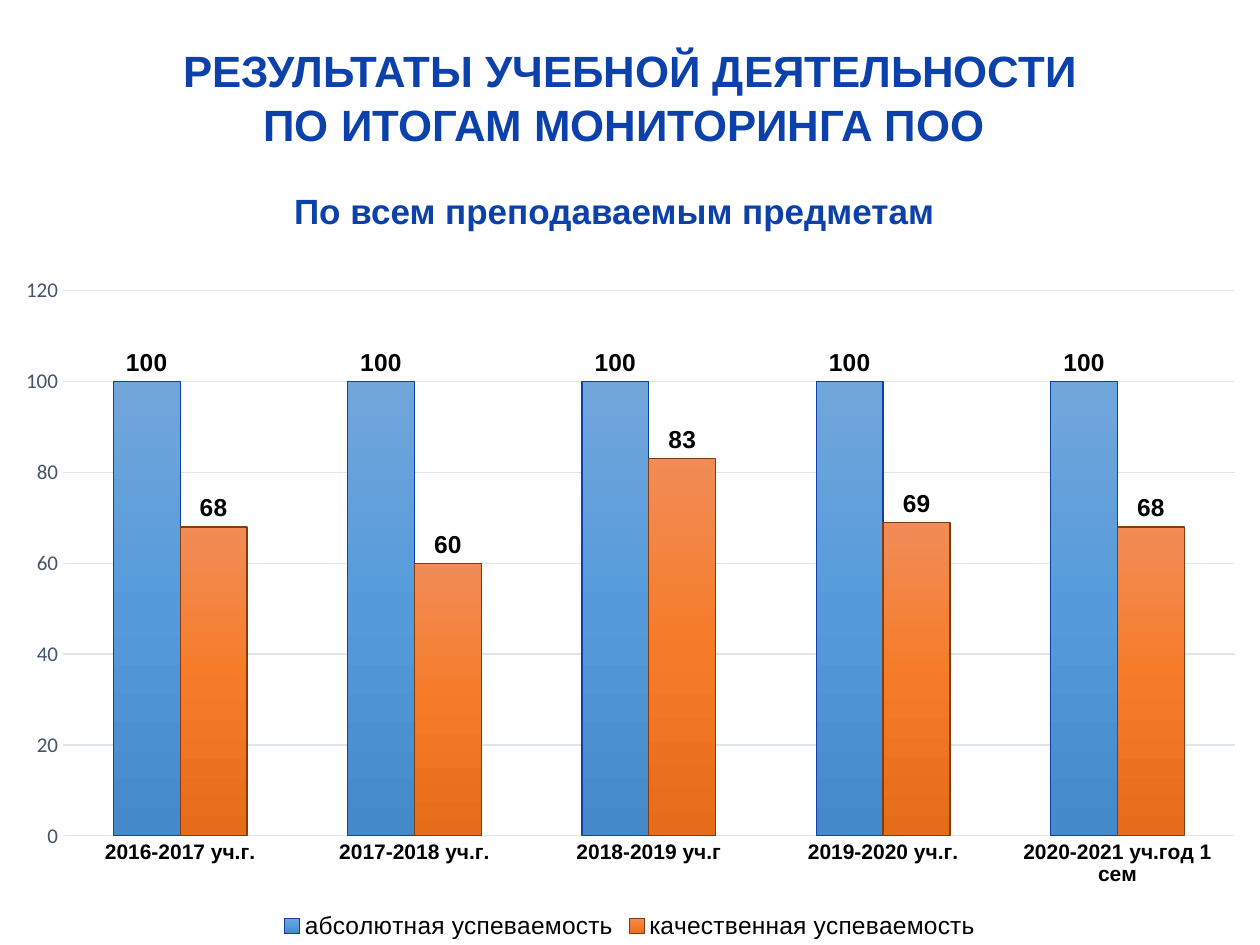
from copy import deepcopy
from dataclasses import dataclass
from typing import Any

from lxml.etree import SubElement
from pptx import Presentation
from pptx.chart.data import CategoryChartData
from pptx.chart.series import BarSeries
from pptx.dml.color import RGBColor
from pptx.enum.chart import XL_CHART_TYPE, XL_LABEL_POSITION, XL_LEGEND_POSITION, XL_TICK_MARK
from pptx.enum.text import MSO_ANCHOR, PP_ALIGN
from pptx.oxml.ns import qn
from pptx.util import Cm, Pt

BLUE = "0C40AA"
BLACK = "000000"
GRID = "E0E5EB"


@dataclass
class Label:
    lines: list[str]
    left: float
    top: float
    width: float
    height: float
    size: float


@dataclass
class Series:
    name: str
    vals: list[int]
    stops: list[str]
    edge: str


LABELS = [
    Label(["РЕЗУЛЬТАТЫ УЧЕБНОЙ ДЕЯТЕЛЬНОСТИ", "ПО ИТОГАМ МОНИТОРИНГА ПОО "], 0, 0.74, 25.4, 2.39, 25),
    Label(["По всем преподаваемым предметам"], 1.55, 3.66, 21.67, 1.12, 20),
]
YEARS = ["2016-2017 уч.г.", "2017-2018 уч.г.", "2018-2019 уч.г", "2019-2020 уч.г.", "2020-2021 уч.год 1 сем"]
SERIES = [
    Series("абсолютная успеваемость", [100] * 5, ["71A6DB", "559BDB", "448ACA"], BLUE),
    Series("качественная успеваемость", [68, 60, 83, 69, 68], ["F18C57", "F67B28", "E56C19"], "843C0B"),
]
LAYOUT = {"layoutTarget": "inner", "xMode": "edge", "yMode": "edge", "x": 0.05, "y": 0.04, "w": 0.93, "h": 0.8}


def tint(code: str) -> RGBColor:
    return RGBColor.from_string(code)


def apply(item: Any, values: dict[str, Any]) -> None:
    for name, value in values.items():
        setattr(item, name, value)


def style(font: Any, size: float, color: str = BLACK, bold: bool = False, name: str = "Arial") -> None:
    apply(font, {"size": Pt(size), "bold": bold, "name": name})
    font.color.rgb = tint(color)


def stroke(line: Any, color: str) -> None:
    line.color.rgb = tint(color)
    line.width = Pt(0.75)


def write(slide: Any, label: Label) -> None:
    box = slide.shapes.add_textbox(Cm(label.left), Cm(label.top), Cm(label.width), Cm(label.height))
    frame = box.text_frame
    apply(frame, {"word_wrap": True, "vertical_anchor": MSO_ANCHOR.MIDDLE, "text": "\n".join(label.lines)})
    for para in frame.paragraphs:
        apply(para, {"alignment": PP_ALIGN.CENTER, "line_spacing": 1.04})
        style(para.runs[0].font, label.size, BLUE, True)


def paint(bars: BarSeries, item: Series) -> None:
    fill = bars.format.fill
    fill.gradient()
    fill.gradient_angle = 270
    stops = bars._element.find(".//" + qn("a:gsLst"))
    stops.append(deepcopy(stops[-1]))
    for index, (stop, code) in enumerate(zip(fill.gradient_stops, item.stops)):
        stop.position = index / 2
        stop.color.rgb = tint(code)
    stroke(bars.format.line, item.edge)
    labels = bars.data_labels
    apply(labels, {"show_value": True, "position": XL_LABEL_POSITION.OUTSIDE_END})
    style(labels.font, 14, bold=True)


def place(chart: Any) -> None:
    area = chart._chartSpace.chart.plotArea
    for old in area.findall(qn("c:layout")):
        area.remove(old)
    layout = SubElement(area, qn("c:layout"))
    area.insert(0, layout)
    manual = SubElement(layout, qn("c:manualLayout"))
    for name, value in LAYOUT.items():
        SubElement(manual, qn("c:" + name)).set("val", str(value))


def plot(slide: Any) -> None:
    data = CategoryChartData()
    data.categories = YEARS
    for item in SERIES:
        data.add_series(item.name, item.vals)
    chart = slide.shapes.add_chart(
        XL_CHART_TYPE.COLUMN_CLUSTERED, Cm(0), Cm(5.31), Cm(25.4), Cm(13.74), data
    ).chart
    apply(chart, {"has_title": False, "has_legend": True})
    style(chart.font, 10, name="Calibri")
    apply(chart.legend, {"position": XL_LEGEND_POSITION.BOTTOM, "include_in_layout": False})
    style(chart.legend.font, 14)
    apply(chart.plots[0], {"gap_width": 150, "overlap": 0, "vary_by_categories": False})
    for bars, item in zip(chart.plots[0].series, SERIES):
        paint(bars, item)
    base, scale = chart.category_axis, chart.value_axis
    for axis in (base, scale):
        apply(axis, {"major_tick_mark": XL_TICK_MARK.NONE, "minor_tick_mark": XL_TICK_MARK.NONE})
    apply(scale, {"minimum_scale": 0, "maximum_scale": 120, "major_unit": 20, "has_major_gridlines": True})
    style(base.tick_labels.font, 12, bold=True)
    style(scale.tick_labels.font, 12, "44546A", name="Calibri")
    stroke(base.format.line, GRID)
    stroke(scale.major_gridlines.format.line, GRID)
    scale.format.line.fill.background()
    place(chart)


def main() -> None:
    deck = Presentation()
    apply(deck, {"slide_width": Cm(25.4), "slide_height": Cm(19.05)})
    slide = deck.slides.add_slide(deck.slide_layouts[6])
    write(slide, LABELS[0])
    plot(slide)
    write(slide, LABELS[1])
    deck.save("out.pptx")


if __name__ == "__main__":
    main()
